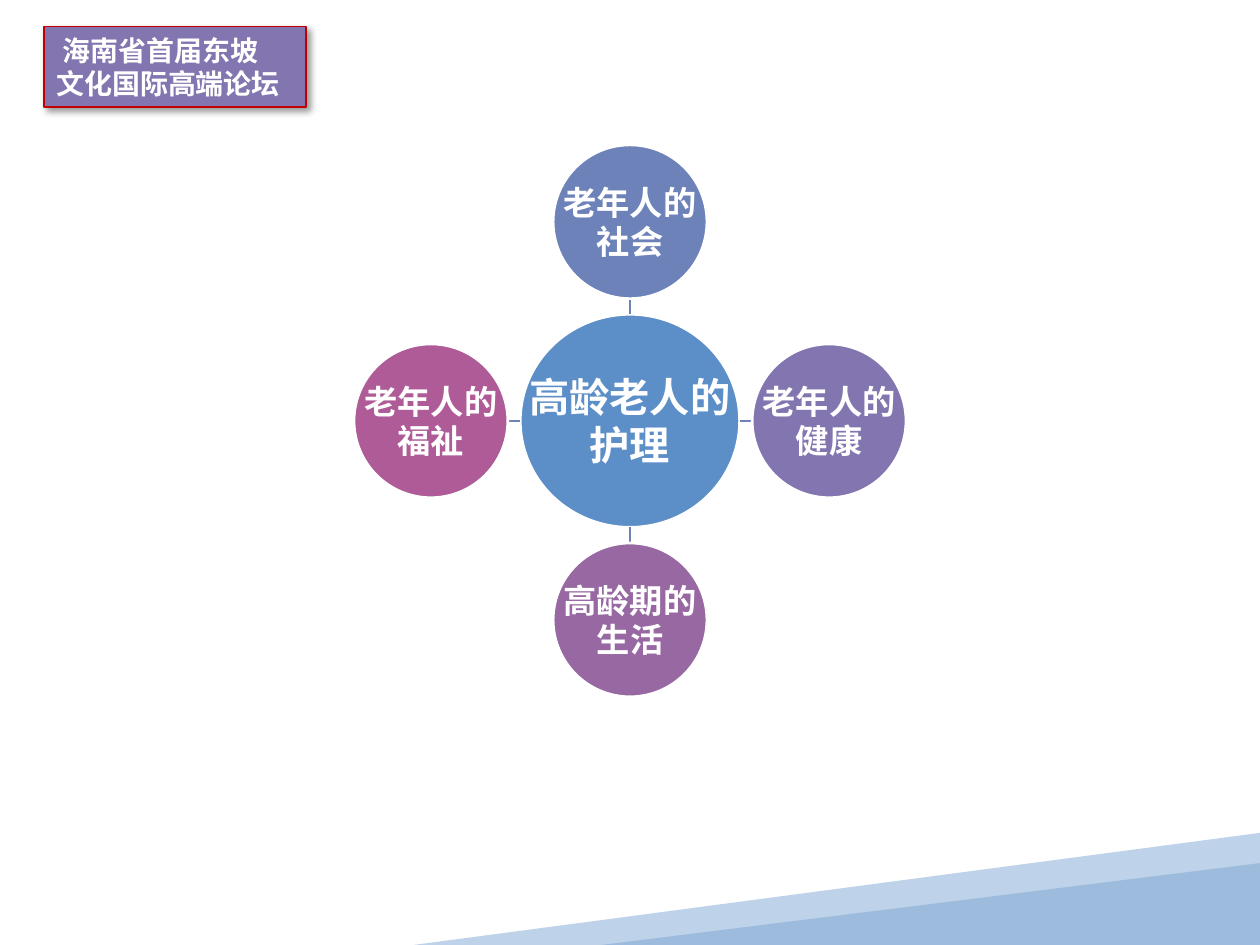
from dataclasses import dataclass
from lxml import etree
from pptx import Presentation, util as u
from pptx.dml.color import RGBColor
from pptx.enum import shapes, text
from pptx.oxml.ns import qn


@dataclass(frozen=True)
class Theme:
    font: str = "Noto Sans CJK SC"
    white: str = "FFFFFF"
    pale: str = "BED2E9"
    sky: str = "9DBCDD"
    hub: str = "5C8FC7"
    link: str = "6E82BA"
    violet: str = "8376B0"
    red: str = "C00000"
    hub_size: int = 23
    node_size: int = 19
    banner_size: int = 16
    leading: float = 1.19


THEME = Theme()
WIDTH, HEIGHT = 10, 7.5
BANNER = ["海南省首届东坡", "文化国际高端论坛"]
BANNER_BOX = (0.35, 0.21, 2.08, 0.64)
HUB = "高龄老人的护理"
NODES = [
    ("老年人的社会", "6E82BA", (0, -1)),
    ("老年人的健康", THEME.violet, (1, 0)),
    ("高龄期的生活", "9868A3", (0, 1)),
    ("老年人的福祉", "AE5B97", (-1, 0)),
]
CENTER = (WIDTH / 2, 3.34)
HUB_SPAN = (1.74, 1.69)
NODE_SPAN = (1.22, 1.22)
ORBIT = 1.58
WEDGE = [(10, 6.61), (10, 7.44), (6.73, 7.5), (3.28, 7.5)]
TRIANGLE_BOX = (4.77, 6.85, 5.23, 0.65)


def inches(values):
    return [u.Inches(value) for value in values]


def paint(shape, fill, line=None, weight=1):
    shape.shadow.inherit = False
    shape.fill.solid()
    shape.fill.fore_color.rgb = RGBColor.from_string(fill)
    if line:
        shape.line.color.rgb = RGBColor.from_string(line)
        shape.line.width = u.Pt(weight)
    else:
        shape.line.fill.background()
    return shape


def write(shape, lines, size, align=text.PP_ALIGN.CENTER, inset=None, first_indent=0):
    frame = shape.text_frame
    frame.word_wrap = True
    frame.vertical_anchor = text.MSO_ANCHOR.MIDDLE
    if inset is not None:
        frame.margin_left = frame.margin_right = u.Inches(inset)
        frame.margin_top = frame.margin_bottom = u.Inches(inset)
    for index, line in enumerate(lines):
        para = frame.add_paragraph() if index else frame.paragraphs[0]
        para.alignment = align
        para.line_spacing = u.Pt(round(size * THEME.leading, 1))
        if first_indent and index == 0:
            para._p.get_or_add_pPr().set("marL", str(u.Inches(first_indent)))
        span = para.add_run()
        span.text = line
        span.font.size = u.Pt(size)
        span.font.bold = True
        span.font.name = THEME.font
        span.font.color.rgb = RGBColor.from_string(THEME.white)
        etree.SubElement(span.font._element, qn("a:ea"), typeface=THEME.font)


def add_circle(page, label, center, span, fill, size, inset):
    box = inches([center[0] - span[0] / 2, center[1] - span[1] / 2, *span])
    circle = page.shapes.add_shape(shapes.MSO_SHAPE.OVAL, *box)
    paint(circle, fill, THEME.white, 1.5)
    write(page.shapes.add_textbox(*box), [label], size, inset=inset)


def add_link(page, direction):
    ends = []
    for axis in (0, 1):
        ends.append((CENTER[axis] + direction[axis] * HUB_SPAN[axis] / 2,
                     CENTER[axis] + direction[axis] * (ORBIT - NODE_SPAN[axis] / 2)))
    (x1, x2), (y1, y2) = ends
    link = page.shapes.add_connector(shapes.MSO_CONNECTOR.STRAIGHT, *inches([x1, y1, x2, y2]))
    link.line.color.rgb = RGBColor.from_string(THEME.link)
    link.line.width = u.Pt(1)
    etree.SubElement(link._element.spPr, qn("a:effectLst"))


def add_backdrop(page):
    points = [inches(point) for point in WEDGE]
    builder = page.shapes.build_freeform(*points[0])
    builder.add_line_segments(points[1:], close=True)
    paint(builder.convert_to_shape(), THEME.pale)
    triangle = page.shapes.add_shape(shapes.MSO_SHAPE.ISOSCELES_TRIANGLE, *inches(TRIANGLE_BOX))
    triangle.adjustments[0] = 1
    paint(triangle, THEME.sky)


def add_banner(page):
    banner = page.shapes.add_shape(shapes.MSO_SHAPE.RECTANGLE, *inches(BANNER_BOX))
    paint(banner, THEME.violet, THEME.red)
    effects = banner._element.spPr.find(qn("a:effectLst"))
    shadow = etree.SubElement(effects, qn("a:outerShdw"), blurRad=str(u.Pt(4)),
                              dist=str(u.Pt(3)), dir="2700000", algn="tl", rotWithShape="0")
    color = etree.SubElement(shadow, qn("a:srgbClr"), val="000000")
    etree.SubElement(color, qn("a:alpha"), val="40000")
    write(banner, BANNER, THEME.banner_size, align=text.PP_ALIGN.LEFT, first_indent=0.05)


def main():
    deck = Presentation()
    deck.slide_width, deck.slide_height = inches([WIDTH, HEIGHT])
    page = deck.slides.add_slide(deck.slide_layouts[6])
    add_backdrop(page)
    add_circle(page, HUB, CENTER, HUB_SPAN, THEME.hub, THEME.hub_size, 0.02)
    for label, fill, direction in NODES:
        add_link(page, direction)
        center = [middle + step * ORBIT for middle, step in zip(CENTER, direction)]
        add_circle(page, label, center, NODE_SPAN, fill, THEME.node_size, 0.01)
    add_banner(page)
    deck.save("out.pptx")


if __name__ == "__main__":
    main()
